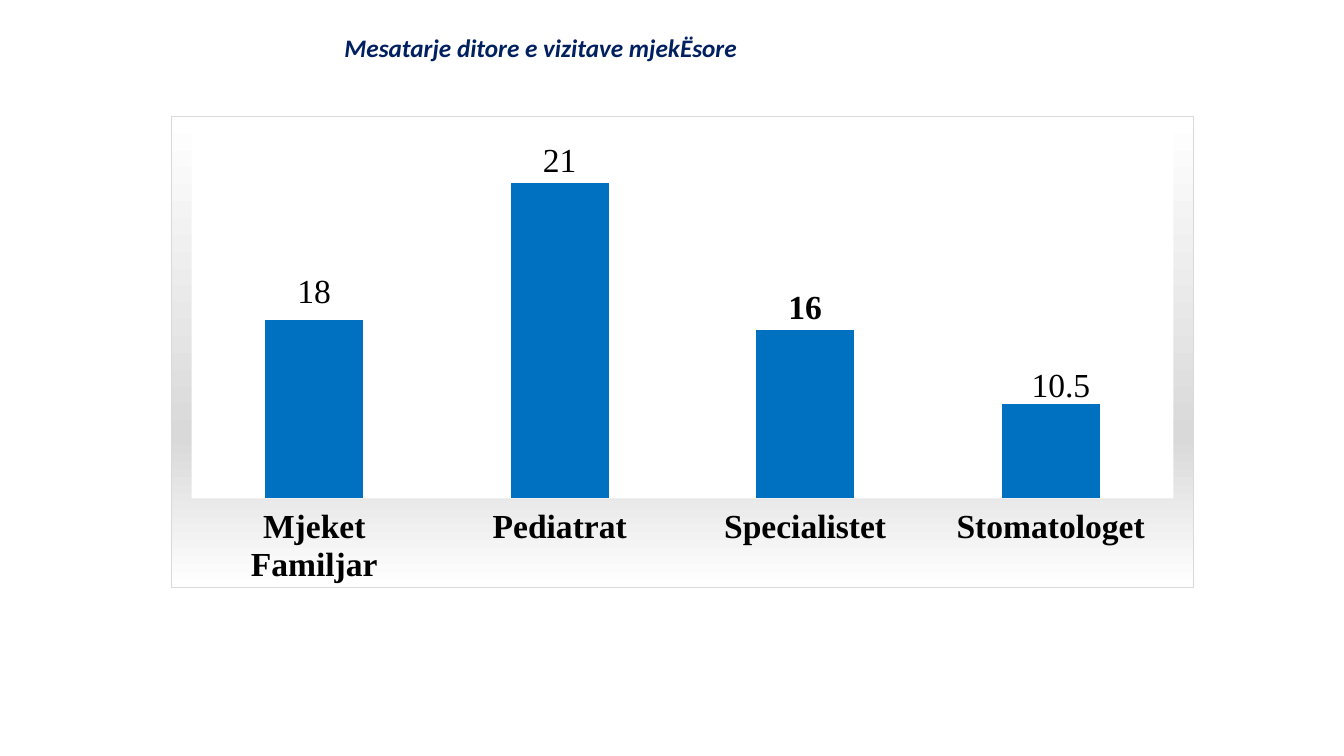
from pptx import Presentation
from pptx.chart.data import CategoryChartData
from pptx.dml.color import RGBColor
from pptx.enum.chart import XL_CHART_TYPE, XL_LABEL_POSITION, XL_TICK_LABEL_POSITION, XL_TICK_MARK
from pptx.oxml import parse_xml
from pptx.oxml.ns import nsdecls
from pptx.util import Cm, Pt

COLUMNS = XL_CHART_TYPE.COLUMN_CLUSTERED
OUTSIDE_END = XL_LABEL_POSITION.OUTSIDE_END
LABELS_LOW = XL_TICK_LABEL_POSITION.LOW
NO_TICKS = XL_TICK_MARK.NONE

NAVY, BLUE, BLACK, WHITE, GREY = "002060", "0070C0", "000000", "FFFFFF", "D9D9D9"
SERIF, SANS = "Times New Roman", "Calibri"

VISITS = {"Mjeket Familjar": 17, "Pediatrat": 30, "Specialistet": 16, "Stomatologet": 9}
# Column index: (label text, horizontal shift, vertical shift)
CUSTOM_LABELS = {0: ("18", 0, -0.01), 1: ("21", 0, 0), 3: ("10.5", 0.01, 0.01)}


def color(value):
    return RGBColor.from_string(value)


def solid_fill(value):
    return f'<a:solidFill><a:srgbClr val="{value}"/></a:solidFill>'


def shape_properties(fill, line):
    return parse_xml(f'<c:spPr {nsdecls("c", "a")}>{fill}{line}</c:spPr>')


def manual_layout(**settings):
    parts = "".join(f'<c:{name} val="{value}"/>' for name, value in settings.items())
    return parse_xml(
        f'<c:layout {nsdecls("c")}><c:manualLayout>{parts}</c:manualLayout></c:layout>'
    )


class SlideBuilder:
    """Holds the text style and the current slide."""

    def __init__(self, deck):
        self.slide = deck.slides.add_slide(deck.slide_layouts[6])
        self.chart_size = 24

    def style(self, font, name, size, value, bold=False, italic=False):
        font.name, font.size = name, Pt(size)
        font.bold, font.italic = bold, italic
        font.color.rgb = color(value)

    def title(self, text, left, top, width, height):
        box = self.slide.shapes.add_textbox(Cm(left), Cm(top), Cm(width), Cm(height))
        box.text_frame.word_wrap = True
        span = box.text_frame.paragraphs[0].add_run()
        span.text = text
        self.style(span.font, SANS, 18, NAVY, bold=True, italic=True)

    def column_chart(self, values, left, top, width, height):
        data = CategoryChartData(number_format="0")
        data.categories = list(values)
        data.add_series("Series 1", list(values.values()))
        frame = self.slide.shapes.add_chart(
            COLUMNS, Cm(left), Cm(top), Cm(width), Cm(height), data
        )
        chart = frame.chart
        chart.has_legend = chart.has_title = False
        self.style(chart.font, SANS, 10, BLACK)
        self.axes(chart)
        self.columns(chart.plots[0])
        self.backgrounds(chart)
        return chart

    def axes(self, chart):
        category_axis, value_axis = chart.category_axis, chart.value_axis
        category_axis.major_tick_mark = category_axis.minor_tick_mark = NO_TICKS
        category_axis.tick_label_position = LABELS_LOW
        category_axis.format.line.fill.background()
        self.style(category_axis.tick_labels.font, SERIF, self.chart_size, BLACK, bold=True)
        value_axis.minimum_scale, value_axis.maximum_scale = 0, 35
        value_axis.has_major_gridlines = False
        value_axis.visible = False

    def columns(self, plot):
        plot.gap_width, plot.overlap = 150, -25
        plot.vary_by_categories = False
        series = plot.series[0]
        series.format.fill.solid()
        series.format.fill.fore_color.rgb = color(BLUE)
        labels = series.data_labels
        labels.show_value = True
        labels.number_format, labels.number_format_is_linked = "0", False
        labels.position = OUTSIDE_END
        self.style(labels.font, SERIF, self.chart_size, BLACK, bold=True)

    def custom_labels(self, chart, labels):
        series = chart.plots[0].series[0]
        for index, (text, _, _) in labels.items():
            label = series.points[index].data_label
            span = label.text_frame.paragraphs[0].add_run()
            span.text = text
            self.style(span.font, SERIF, self.chart_size, BLACK)
            label.position = OUTSIDE_END
        # Shift labels from their default place
        label_elements = chart.element.xpath(".//c:dLbl")
        for element, (_, right, down) in zip(label_elements, labels.values()):
            if right or down:
                element.insert(1, manual_layout(x=right, y=down))

    def backgrounds(self, chart):
        # Vertical gradient behind the whole chart
        stops = "".join(
            f'<a:gs pos="{percent * 1000}"><a:srgbClr val="{value}"/></a:gs>'
            for percent, value in ((0, WHITE), (68, GREY), (100, WHITE))
        )
        gradient = f'<a:gradFill><a:gsLst>{stops}</a:gsLst><a:lin ang="5400000" scaled="0"/></a:gradFill>'
        border = f'<a:ln w="{Pt(0.75)}">{solid_fill(GREY)}</a:ln>'
        chart.element.xpath("c:chart")[0].addnext(shape_properties(gradient, border))

        # White plot area at a fixed place
        plot_area = chart.element.xpath("c:chart/c:plotArea")[0]
        for layout in plot_area.xpath("c:layout"):
            plot_area.remove(layout)
        plot_area.insert(0, manual_layout(
            layoutTarget="inner", xMode="edge", yMode="edge", x=0.02, y=0.03, w=0.96, h=0.78
        ))
        plot_area.append(shape_properties(solid_fill(WHITE), "<a:ln><a:noFill/></a:ln>"))


def main():
    deck = Presentation()
    deck.slide_width, deck.slide_height = Cm(33.87), Cm(19.05)
    page = SlideBuilder(deck)

    # Chart of daily visits
    chart = page.column_chart(VISITS, 4.3, 2.93, 25.8, 11.9)
    page.custom_labels(chart, CUSTOM_LABELS)

    # Title
    page.title("Mesatarje ditore e vizitave mjekËsore", 8.43, 0.69, 16.94, 1.8)

    deck.save("out.pptx")


if __name__ == "__main__":
    main()
